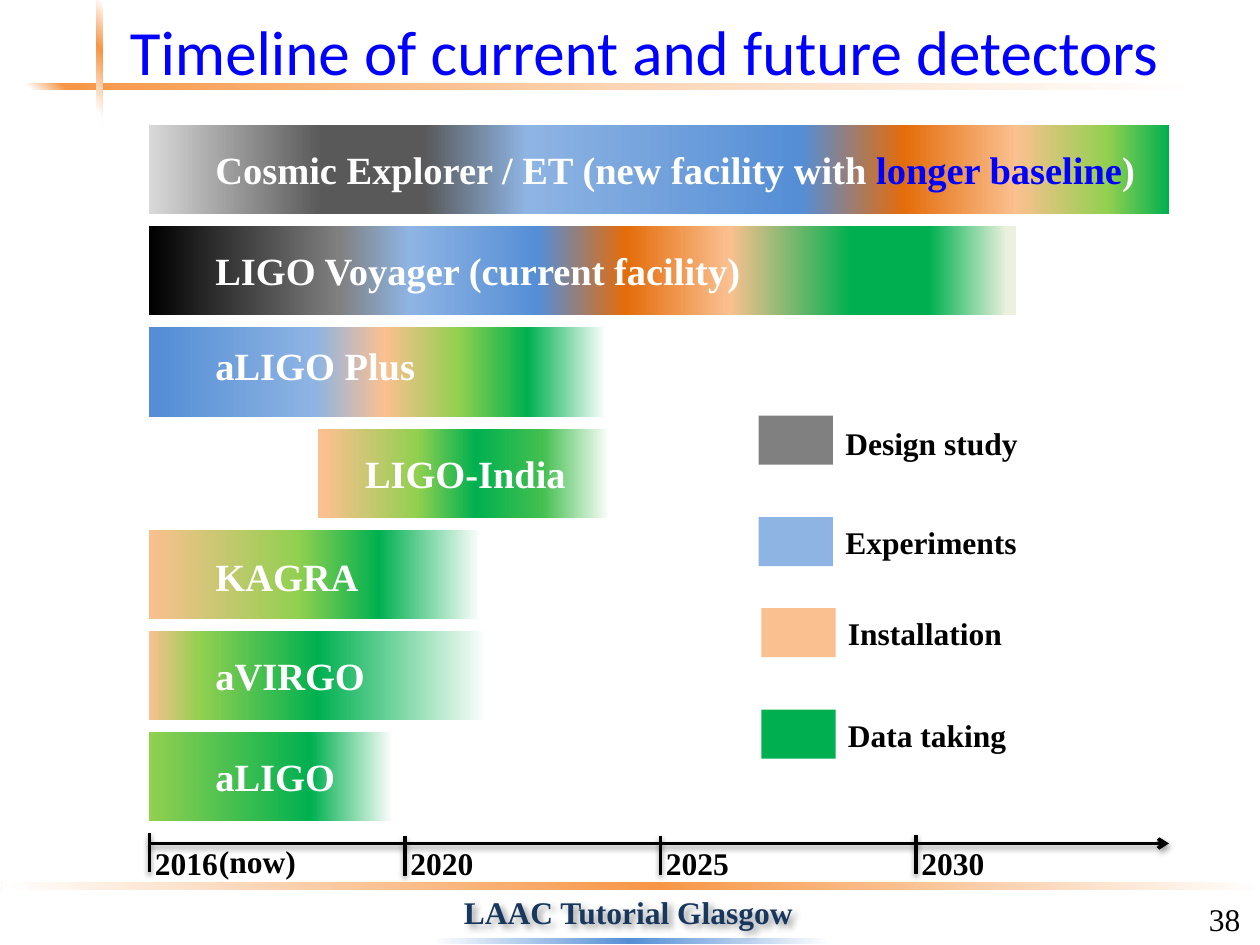
from lxml import etree
from pptx import Presentation
from pptx.dml.color import RGBColor
from pptx.enum.shapes import MSO_CONNECTOR, MSO_SHAPE
from pptx.enum.text import MSO_ANCHOR, PP_ALIGN
from pptx.oxml.ns import qn
from pptx.util import Pt

RECTANGLE = MSO_SHAPE.RECTANGLE
STRAIGHT = MSO_CONNECTOR.STRAIGHT
LEFT, CENTER = PP_ALIGN.LEFT, PP_ALIGN.CENTER
MIDDLE = MSO_ANCHOR.MIDDLE
SERIF = "Times New Roman"
WHITE, BLACK, BLUE, NAVY = "FFFFFF", "000000", "0000FF", "17375E"
GRAY, SKY, PEACH, GREEN = "808080", "8EB4E3", "FAC090", "00B050"
LIME, COBALT, RUST, ORANGE = "92D050", "558ED5", "E46C0A", "F79646"

DETECTORS = [
    (0, 583, 31, 8.5,
     [("Cosmic Explorer / ET (new facility with ", WHITE),
      ("longer baseline", BLUE), (")", WHITE)],
     [(0, "D9D9D9"), (17, "595959"), (27, "595959"), (37, SKY), (64, COBALT),
      (74, RUST), (85, PEACH), (94, LIME), (100, GREEN)]),
    (0, 495.5, 31, 8.5, [("LIGO Voyager (current facility)", WHITE)],
     [(0, BLACK), (22, GRAY), (30, SKY), (45, COBALT), (55, RUST),
      (67, PEACH), (81, GREEN), (90, GREEN), (99, "EBF1DE")]),
    (0, 264, 31, 5, [("aLIGO Plus", WHITE)],
     [(2, COBALT), (36, SKY), (51, PEACH), (67, LIME), (82, GREEN), (99, WHITE)]),
    (96.5, 167, 20, 8.5, [("LIGO-India", WHITE)],
     [(2, PEACH), (34, LIME), (54, GREEN), (77, "43BF50"), (100, WHITE)]),
    (0, 193.5, 31, 9.5, [("KAGRA", WHITE)],
     [(0, PEACH), (44, LIME), (68, GREEN), (98, WHITE)]),
    (0, 193.5, 31, 8.5, [("aVIRGO", WHITE)],
     [(0, PEACH), (15, LIME), (50, GREEN), (100, WHITE)]),
    (0, 142.5, 31, 8.5, [("aLIGO", WHITE)],
     [(0, LIME), (65, GREEN), (98, WHITE)]),
]
LEGEND = [
    (0, 0, 1.5, "Design study", GRAY),
    (0, 58, 0, "Experiments", SKY),
    (1.5, 110, 0, "Installation", PEACH),
    (1.5, 168, 0, "Data taking", GREEN),
]
YEARS = ["2016", "2020", "2025", "2030"]
TICK_TOPS = [-6, -4, -4.5, -5]


def color(value):
    return RGBColor.from_string(value)


def add_run(paragraph, text, value, size, font=SERIF, bold=True):
    run = paragraph.add_run()
    run.text = text
    run.font.name = font
    run.font.size = Pt(size)
    run.font.bold = bold
    run.font.color.rgb = color(value)


def add_label(slide, left, top, width, height, runs, size=18, align=LEFT, bold=True):
    label = slide.shapes.add_textbox(Pt(left), Pt(top), Pt(width), Pt(height))
    label.text_frame.word_wrap = False
    paragraph = label.text_frame.paragraphs[0]
    paragraph.alignment = align
    for text, value in runs:
        add_run(paragraph, text, value, size, bold=bold)
    return label


def add_rectangle(slide, left, top, width, height):
    shape = slide.shapes.add_shape(RECTANGLE, Pt(left), Pt(top), Pt(width), Pt(height))
    shape.shadow.inherit = False
    shape.line.fill.background()
    return shape


def add_gradient(slide, left, top, width, height, stops, radial=False):
    shape = add_rectangle(slide, left, top, width, height)
    shape.fill.gradient()
    gradient = shape._element.spPr.find(qn("a:gradFill"))
    for child in list(gradient):
        gradient.remove(child)
    stop_list = etree.SubElement(gradient, qn("a:gsLst"))
    for position, value in stops:
        stop = etree.SubElement(stop_list, qn("a:gs"), pos=str(position * 1000))
        etree.SubElement(stop, qn("a:srgbClr"), val=value)
    if radial:
        focus = etree.SubElement(gradient, qn("a:path"), path="circle")
        etree.SubElement(focus, qn("a:fillToRect"), t="100000", r="100000")
    else:
        etree.SubElement(gradient, qn("a:lin"), ang="0", scaled="0")
    return shape


def cast_shadow(shape, blur, distance, degrees, opacity):
    effects = etree.SubElement(shape._element.spPr, qn("a:effectLst"))
    shadow = etree.SubElement(
        effects, qn("a:outerShdw"), blurRad=str(Pt(blur)), dist=str(Pt(distance)),
        dir=str(degrees * 60000), rotWithShape="0")
    tint = etree.SubElement(shadow, qn("a:srgbClr"), val=BLACK)
    etree.SubElement(tint, qn("a:alpha"), val=str(opacity * 1000))


def add_line(slide, x1, y1, x2, y2, arrow=False):
    line = slide.shapes.add_connector(STRAIGHT, Pt(x1), Pt(y1), Pt(x2), Pt(y2))
    line.line.color.rgb = color(BLACK)
    line.line.width = Pt(2)
    if arrow:
        outline = line._element.spPr.find(qn("a:ln"))
        etree.SubElement(outline, qn("a:tailEnd"), type="arrow")
    cast_shadow(line, 3.1, 1.6, 90, 38)


def add_header(slide, left, top, width, height):
    add_gradient(slide, left, top + 47.5, width, 3.6,
                 [(2, WHITE), (5, ORANGE), (50, "FCD5B5"), (96, WHITE)], radial=True)
    upright = add_gradient(slide, left + 18.5, top + 34, 70.5, 3.6,
                           [(10, WHITE), (61, ORANGE), (100, WHITE)], radial=True)
    upright.rotation = 90
    title = slide.shapes.title
    title.left, title.top = Pt(left + 64), Pt(top - 5)
    title.width, title.height = Pt(620.5), Pt(height)
    title.text_frame.vertical_anchor = MIDDLE
    paragraph = title.text_frame.paragraphs[0]
    paragraph.alignment = LEFT
    add_run(paragraph, "Timeline of current and future detectors", BLUE, 36, "Calibri", False)


def add_detectors(slide, left, top, width, height):
    pitch = height / len(DETECTORS)
    for row, (start, length, indent, drop, runs, stops) in enumerate(DETECTORS):
        bar_left, bar_top = left + start, top + row * pitch
        add_gradient(slide, bar_left, bar_top, length, 51, stops)
        add_label(slide, bar_left + indent, bar_top + drop, width - indent, 34, runs, 22)


def add_legend(slide, left, top):
    for shift, offset, drop, name, value in LEGEND:
        swatch = add_rectangle(slide, left + shift, top + offset, 42.5, 28)
        swatch.fill.solid()
        swatch.fill.fore_color.rgb = color(value)
        add_label(slide, left + shift + 42.5, top + offset + drop, 114, 29, [(name, BLACK)])


def add_time_axis(slide, left, top, width):
    add_line(slide, left, top, left + width, top, arrow=True)
    for index, (year, rise) in enumerate(zip(YEARS, TICK_TOPS)):
        tick = left + index * 146
        add_line(slide, tick, top + rise, tick, top + rise + 22.5)
        add_label(slide, tick - 4.5, top - 3, 51, 29, [(year, BLACK)], align=CENTER)
    add_label(slide, left + 32.5, top - 4.5, 59, 29, [("(now)", BLACK)])


def add_footer(slide, left, top, width):
    add_gradient(slide, left, top, width, 3.6,
                 [(0, WHITE), (52, ORANGE), (100, WHITE)], radial=True)
    add_gradient(slide, left + 246, top + 31.5, 227, 3.6,
                 [(0, WHITE), (50, COBALT), (100, WHITE)])
    venue = add_label(slide, left + 257, top + 2, 204.5, 29, [("LAAC Tutorial Glasgow", NAVY)])
    cast_shadow(venue, 4, 3, 45, 40)
    add_label(slide, left + 682.5, top + 6, 32.5, 29, [("38", BLACK)], align=CENTER, bold=False)


def main():
    presentation = Presentation()
    presentation.slide_width, presentation.slide_height = Pt(720), Pt(540)
    slide = presentation.slides.add_slide(presentation.slide_layouts[5])
    add_header(slide, 3, 0, 708.5, 67.5)
    add_detectors(slide, 85, 71.5, 583, 404.6)
    add_legend(slide, 433.5, 237.5)
    add_time_axis(slide, 85.5, 482, 582.5)
    add_footer(slide, 1, 504.5, 718.5)
    presentation.save("out.pptx")


if __name__ == "__main__":
    main()
